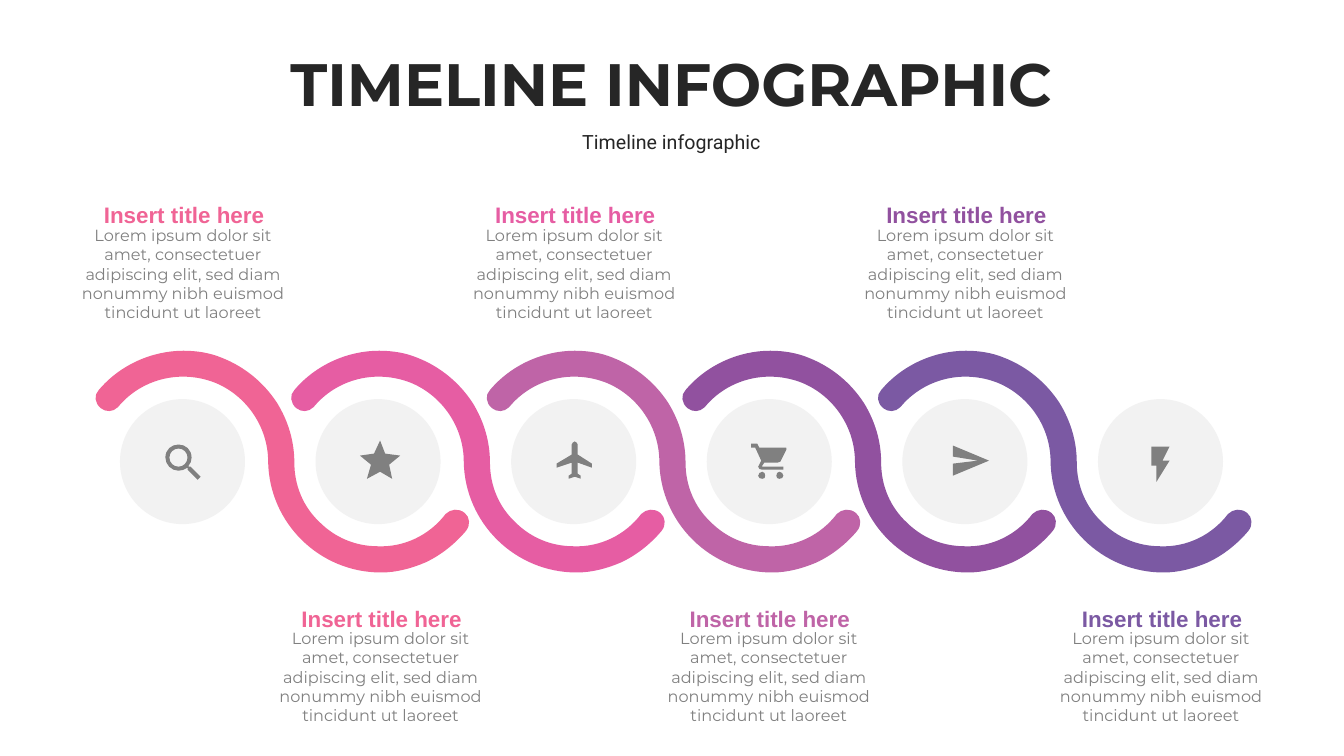
from pptx import Presentation
from pptx.dml.color import RGBColor
from pptx.enum.shapes import MSO_SHAPE as Preset
from pptx.enum.text import MSO_ANCHOR as Anchor, MSO_AUTO_SIZE as AutoSize, PP_ALIGN as Align
from pptx.oxml.ns import qn
from pptx.util import Inches, Pt

ROSE = RGBColor(0xF0, 0x64, 0x95)
PINK = RGBColor(0xE6, 0x5D, 0xA3)
ORCHID = RGBColor(0xBF, 0x64, 0xA7)
PURPLE = RGBColor(0x91, 0x51, 0x9F)
VIOLET = RGBColor(0x7B, 0x59, 0xA3)
DISC = RGBColor(0xF2, 0xF2, 0xF2)
GREY = RGBColor(0x80, 0x80, 0x80)
INK = RGBColor(0x26, 0x26, 0x26)

PITCH = 1.94
TOP_ROW, BOTTOM_ROW = 1.94, 5.94
HEADING = "Insert title here"
BODY = ("Lorem ipsum dolor sit amet, consectetuer adipiscing elit, "
        "sed diam nonummy nibh euismod tincidunt ut laoreet")

RIBBON_COLORS = [ROSE, PINK, ORCHID, PURPLE, VIOLET]
STAGES = [
    (0.94, TOP_ROW, ROSE), (2.9, BOTTOM_ROW, ROSE), (4.82, TOP_ROW, PINK),
    (6.75, BOTTOM_ROW, ORCHID), (8.7, TOP_ROW, PURPLE), (10.64, BOTTOM_ROW, VIOLET),
]

RIBBON = [[
    (0.98, 3.87), (0.93, 3.92, 0.94, 4, 1, 4.05), (1.05, 4.09, 1.12, 4.09, 1.17, 4.04),
    (1.4, 3.76, 1.79, 3.66, 2.14, 3.8), (2.45, 3.93, 2.66, 4.24, 2.66, 4.58),
    (2.67, 5.19, 3.17, 5.68, 3.78, 5.68), (3.93, 5.68, 4.08, 5.64, 4.22, 5.58),
    (4.37, 5.51, 4.51, 5.4, 4.62, 5.27), (4.67, 5.21, 4.66, 5.13, 4.61, 5.09),
    (4.55, 5.04, 4.47, 5.05, 4.42, 5.1), (4.26, 5.31, 4.01, 5.43, 3.75, 5.42),
    (3.52, 5.42, 3.32, 5.33, 3.17, 5.18), (3.01, 5.03, 2.92, 4.82, 2.92, 4.59),
    (2.92, 4.38, 2.86, 4.18, 2.75, 4), (2.62, 3.8, 2.43, 3.64, 2.2, 3.55),
    (2.08, 3.5, 1.95, 3.48, 1.82, 3.48), (1.51, 3.48, 1.19, 3.62, 0.98, 3.87),
]]
MAGNIFIER = [
    [(1.89, 4.63), (1.87, 4.63), (1.87, 4.62), (1.89, 4.6, 1.9, 4.57, 1.9, 4.54),
     (1.9, 4.46, 1.84, 4.41, 1.77, 4.41), (1.7, 4.41, 1.64, 4.46, 1.64, 4.54),
     (1.64, 4.61, 1.7, 4.67, 1.77, 4.67), (1.8, 4.67, 1.83, 4.66, 1.86, 4.64),
     (1.86, 4.66), (1.96, 4.76), (1.99, 4.73)],
    [(1.77, 4.63), (1.72, 4.63, 1.68, 4.59, 1.68, 4.54), (1.68, 4.49, 1.72, 4.45, 1.77, 4.45),
     (1.82, 4.45, 1.86, 4.49, 1.86, 4.54), (1.86, 4.59, 1.82, 4.63, 1.77, 4.63)],
]
STAR = [[(3.77, 4.68), (3.89, 4.75), (3.86, 4.61), (3.97, 4.52), (3.82, 4.5),
         (3.77, 4.37), (3.71, 4.5), (3.57, 4.52), (3.68, 4.61), (3.64, 4.75)]]
PLANE = [[
    (5.87, 4.64), (5.87, 4.6), (5.73, 4.51), (5.73, 4.41), (5.73, 4.4, 5.71, 4.38, 5.7, 4.38),
    (5.69, 4.38, 5.67, 4.4, 5.67, 4.41), (5.67, 4.51), (5.52, 4.6), (5.52, 4.64), (5.67, 4.59),
    (5.67, 4.7), (5.64, 4.72), (5.64, 4.75), (5.7, 4.73), (5.76, 4.75), (5.76, 4.72),
    (5.73, 4.7), (5.73, 4.59),
]]
CART = [
    [(7.56, 4.68), (7.54, 4.68, 7.52, 4.7, 7.52, 4.72), (7.52, 4.74, 7.54, 4.75, 7.56, 4.75),
     (7.58, 4.75, 7.59, 4.74, 7.59, 4.72), (7.59, 4.7, 7.58, 4.68, 7.56, 4.68)],
    [(7.45, 4.4), (7.45, 4.44), (7.49, 4.44), (7.55, 4.57), (7.53, 4.61),
     (7.53, 4.62, 7.52, 4.62, 7.52, 4.63), (7.52, 4.65, 7.54, 4.66, 7.56, 4.66),
     (7.77, 4.66), (7.77, 4.63), (7.56, 4.63), (7.56, 4.62), (7.58, 4.59), (7.71, 4.59),
     (7.72, 4.59, 7.73, 4.59, 7.74, 4.58), (7.8, 4.46), (7.8, 4.44, 7.8, 4.44, 7.79, 4.44),
     (7.53, 4.44), (7.51, 4.4)],
    [(7.73, 4.68), (7.71, 4.68, 7.7, 4.7, 7.7, 4.72), (7.7, 4.74, 7.71, 4.75, 7.73, 4.75),
     (7.75, 4.75, 7.77, 4.74, 7.77, 4.72), (7.77, 4.7, 7.75, 4.68, 7.73, 4.68)],
]
PAPER_DART = [[(9.45, 4.72), (9.81, 4.57), (9.45, 4.42), (9.45, 4.53), (9.7, 4.57), (9.45, 4.6)]]
BOLT = [[(11.42, 4.43), (11.42, 4.62), (11.47, 4.62), (11.47, 4.78), (11.6, 4.57),
         (11.53, 4.57), (11.6, 4.43)]]
ICONS = [MAGNIFIER, STAR, PLANE, CART, PAPER_DART, BOLT]


def paint(shape, color):
    """Give a shape a flat fill without line or shadow."""
    shape.shadow.inherit = False
    shape.fill.solid()
    shape.fill.fore_color.rgb = color
    shape.line.fill.background()


def bend(shape, contours):
    """Join each three segments that stand for a curve into a cubic curve."""
    steps = iter(list(shape.element.iter(qn("a:lnTo"))))
    for contour in contours:
        for segment in contour[1:]:
            curve = next(steps)
            if len(segment) == 6:
                curve.tag = qn("a:cubicBezTo")
                for step in (next(steps), next(steps)):
                    curve.append(step[0])
                    step.getparent().remove(step)


def add_outline(slide, contours, color, shift=0):
    """Draw closed contours as one freeform, moved right by shift."""
    rings = [[(Inches(segment[i] + shift), Inches(segment[i + 1]))
              for segment in contour for i in range(0, len(segment), 2)]
             for contour in contours]
    builder = slide.shapes.build_freeform(*rings[0][0])
    for index, ring in enumerate(rings):
        if index:
            builder.move_to(*ring[0])
        builder.add_line_segments(ring[1:], close=True)
    outline = builder.convert_to_shape()
    bend(outline, contours)
    paint(outline, color)


def add_disc(slide, left):
    """Draw the pale disc behind an icon."""
    paint(slide.shapes.add_shape(Preset.OVAL, Inches(left), Inches(3.96),
                                 Inches(1.24), Inches(1.24)), DISC)


def write(frame, text, font_name, size, color, bold=False, inset=0, anchor=Anchor.MIDDLE):
    """Fill a text frame with one centred paragraph."""
    frame.text = text
    frame.word_wrap = True
    frame.vertical_anchor = anchor
    frame.margin_left = frame.margin_right = Inches(inset)
    frame.margin_top = frame.margin_bottom = Inches(inset)
    paragraph = frame.paragraphs[0]
    paragraph.alignment = Align.CENTER
    font = paragraph.runs[0].font
    font.name, font.size, font.bold = font_name, Pt(size), bold
    font.color.rgb = color


def add_text(slide, left, top, width, height):
    """Add a text box and return its frame."""
    return slide.shapes.add_textbox(Inches(left), Inches(top),
                                    Inches(width), Inches(height)).text_frame


def add_title(slide, text):
    """Place and format the slide title."""
    title = slide.shapes.title
    title.left, title.top = Inches(0.56), Inches(0.5)
    title.width, title.height = Inches(12.2), Inches(0.72)
    write(title.text_frame, text, "Montserrat", 42.7, INK, bold=True)
    title.text_frame.auto_size = AutoSize.NONE
    title.text_frame.paragraphs[0].line_spacing = 0.9


def add_subtitle(slide, text):
    """Write the line below the title."""
    subtitle = add_text(slide, 0.56, 1.29, 12.2, 0.25)
    write(subtitle, text, "Roboto", 14, INK)
    subtitle.paragraphs[0].line_spacing = 0.9


def add_stage(slide, left, top, color):
    """Write a coloured heading with its description."""
    heading = add_text(slide, left, top, 1.77, 0.38)
    write(heading, HEADING, "Arial", 16, color, bold=True, inset=0.06, anchor=Anchor.TOP)
    body = add_text(slide, left - 0.19, top + 0.36, 2.13, 0.83)
    write(body, BODY, "Montserrat", 11.5, GREY, inset=0.03)
    heading.auto_size = body.auto_size = AutoSize.SHAPE_TO_FIT_TEXT


def main():
    """Build the timeline slide and save it."""
    deck = Presentation()
    deck.slide_width, deck.slide_height = Inches(13.33), Inches(7.5)
    slide = deck.slides.add_slide(deck.slide_layouts[5])
    add_title(slide, "TIMELINE INFOGRAPHIC")
    add_subtitle(slide, "Timeline infographic")
    for index, color in enumerate(RIBBON_COLORS):
        add_outline(slide, RIBBON, color, shift=index * PITCH)
    for index, icon in enumerate(ICONS):
        add_disc(slide, 1.19 + index * PITCH)
        add_outline(slide, icon, GREY)
    for left, top, color in STAGES:
        add_stage(slide, left, top, color)
    deck.save("out.pptx")


if __name__ == "__main__":
    main()
